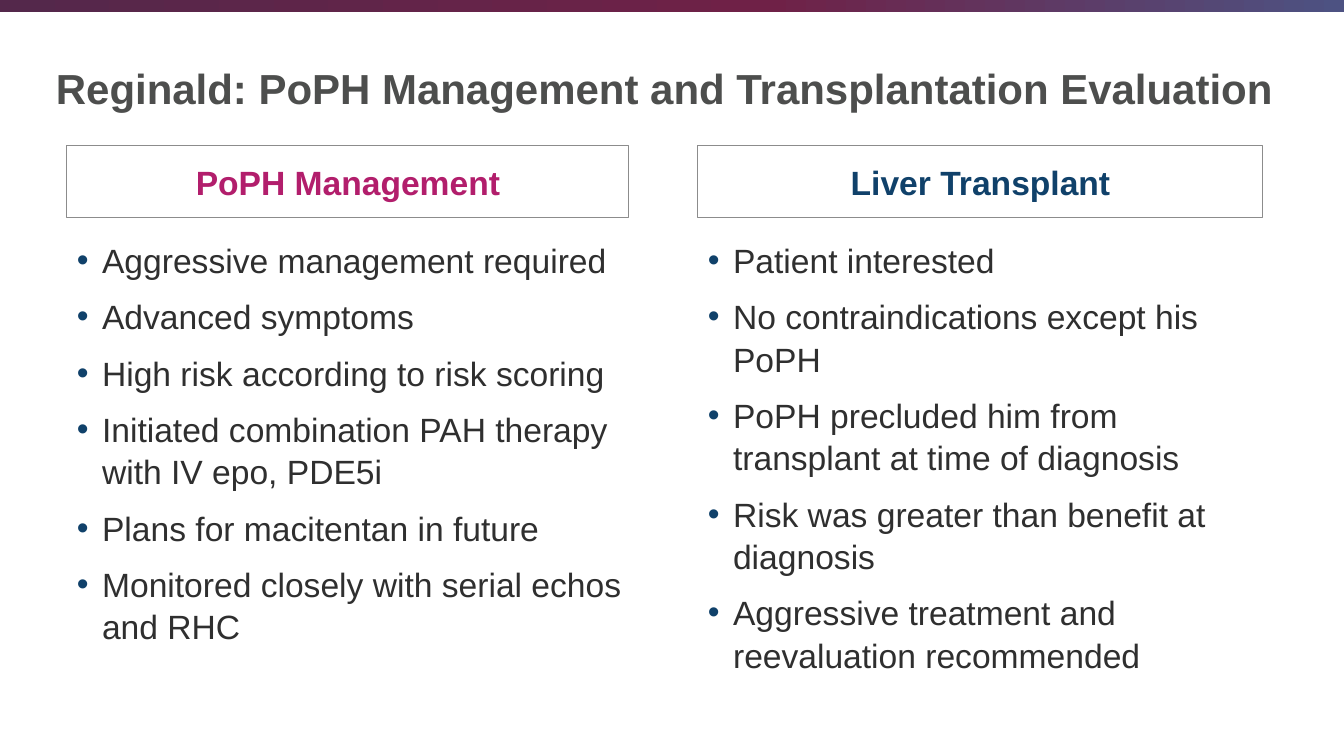
from copy import deepcopy

from lxml import etree
from pptx import Presentation
from pptx import util as u
from pptx.dml.color import RGBColor
from pptx.enum import shapes, text
from pptx.oxml.ns import qn

EMU_PER_PX = 914400 / 100.8
SLIDE_W, SLIDE_H = 1344, 756


def px(length):
    return u.Emu(round(length * EMU_PER_PX))


def rgb(hex_code):
    return RGBColor.from_string(hex_code)


class Deck:
    font = "Arial"
    body_size, title_size = 24, 30
    ink, title_ink, rule, navy, magenta = (
        "2F2F2F", "4D4E4D", "8C8C8C", "10416A", "B21E6C")

    def __init__(self):
        self.prs = Presentation()
        self.prs.slide_width, self.prs.slide_height = px(SLIDE_W), px(SLIDE_H)
        self.slide = self.prs.slides.add_slide(self.prs.slide_layouts[6])

    def rect(self, *box):
        shape = self.slide.shapes.add_shape(
            shapes.MSO_SHAPE.RECTANGLE, *map(px, box))
        shape.shadow.inherit = False
        return shape

    def textbox(self, *box):
        frame = self.slide.shapes.add_textbox(*map(px, box)).text_frame
        frame.word_wrap = True
        return frame

    def run(self, paragraph, words, size, color, bold=False):
        run = paragraph.add_run()
        run.text = words
        run.font.name, run.font.size, run.font.bold = self.font, u.Pt(size), bold
        run.font.color.rgb = rgb(color)

    def gradient_band(self, box, stops):
        band = self.rect(*box)
        band.line.fill.background()
        band.fill.gradient()
        band.fill.gradient_angle = 0
        stop_list = band._element.spPr.find(".//" + qn("a:gsLst"))
        while len(stop_list) < len(stops):
            stop_list.append(deepcopy(stop_list[0]))
        for stop, (position, color) in zip(band.fill.gradient_stops, stops):
            stop.position = position
            stop.color.rgb = rgb(color)

    def title(self, box, words):
        frame = self.textbox(*box)
        frame.vertical_anchor = text.MSO_ANCHOR.MIDDLE
        self.run(frame.paragraphs[0], words, self.title_size, self.title_ink, True)

    def heading(self, box, words, color):
        frame_box = self.rect(*box)
        frame_box.fill.background()
        frame_box.line.color.rgb = rgb(self.rule)
        frame_box.line.width = u.Pt(0.75)
        frame = frame_box.text_frame
        frame.vertical_anchor = text.MSO_ANCHOR.MIDDLE
        frame.paragraphs[0].alignment = text.PP_ALIGN.CENTER
        self.run(frame.paragraphs[0], words, self.body_size, color, True)

    def bullets(self, box, points):
        frame = self.textbox(*box)
        for index, point in enumerate(points):
            paragraph = frame.add_paragraph() if index else frame.paragraphs[0]
            paragraph.space_before = u.Pt(10)
            paragraph.line_spacing = 1.05
            self.bullet_mark(paragraph)
            self.run(paragraph, point, self.body_size, self.ink)

    def bullet_mark(self, paragraph):
        props = paragraph._p.get_or_add_pPr()
        indent = u.Inches(0.25)
        props.set("marL", str(indent))
        props.set("indent", str(-indent))
        color = etree.SubElement(props, qn("a:buClr"))
        etree.SubElement(color, qn("a:srgbClr"), val=self.navy)
        etree.SubElement(props, qn("a:buFont"), typeface=self.font)
        etree.SubElement(props, qn("a:buChar"), char="•")


def main():
    deck = Deck()

    # Top band
    deck.gradient_band((0, 0, SLIDE_W, 12),
                       [(0, "54284B"), (0.57, "6F2147"), (1, "4D5282")])

    # Title
    deck.title((46, 22, 1250, 131),
               "Reginald: PoPH Management and Transplantation Evaluation")

    # Two columns: left, heading width, heading, colour, points
    columns = [
        (67, 562, "PoPH Management", deck.magenta, [
            "Aggressive management required",
            "Advanced symptoms",
            "High risk according to risk scoring",
            "Initiated combination PAH therapy with IV epo, PDE5i",
            "Plans for macitentan in future",
            "Monitored closely with serial echos and RHC",
        ]),
        (698, 565, "Liver Transplant", deck.navy, [
            "Patient interested",
            "No contraindications except his PoPH",
            "PoPH precluded him from transplant at time of diagnosis",
            "Risk was greater than benefit at diagnosis",
            "Aggressive treatment and reevaluation recommended",
        ]),
    ]
    for left, width, heading, color, points in columns:
        deck.heading((left, 146, width, 72), heading, color)
        deck.bullets((left, 233, width + 7, 436), points)

    deck.prs.save("out.pptx")


if __name__ == "__main__":
    main()
